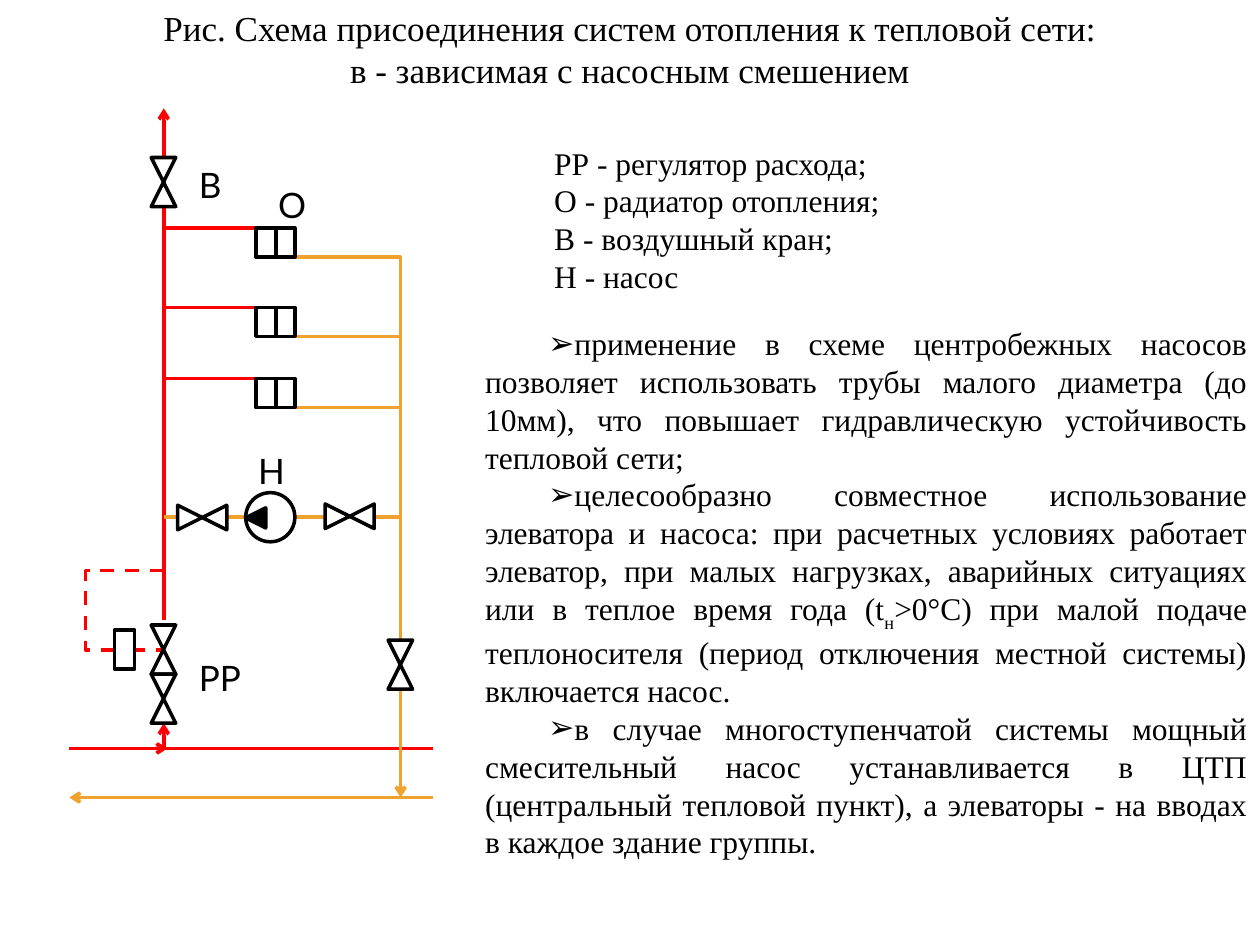
"""Draw a heating scheme with pump mixing beside its legend and notes."""
import pptx
import pptx.util
import pptx.dml.color
import pptx.enum.dml
import pptx.enum.shapes
import pptx.enum.text
import pptx.oxml
import pptx.oxml.ns

STEP = pptx.util.Inches(0.1)
RED, GOLD, BLACK, WHITE = "FF0000", "F0A22E", "000000", "FFFFFF"
SERIF, SANS = "Times New Roman", "Lato"
FORM = pptx.enum.shapes.MSO_SHAPE
LINK = pptx.enum.shapes.MSO_CONNECTOR
ALIGN = pptx.enum.text.PP_ALIGN
HOT, COLD = 13, 31.8
TOP, SUB = 59.4, 63.3

HEAD = ["Рис. Схема присоединения систем отопления к тепловой сети:",
        "в - зависимая с насосным смешением"]
KEYS = ["РР - регулятор расхода;", "О - радиатор отопления;",
        "В - воздушный кран;", "Н - насос"]
NOTES = [
    ["применение в схеме центробежных насосов позволяет использовать трубы "
     "малого диаметра (до 10мм), что повышает гидравлическую устойчивость "
     "тепловой сети;"],
    ["целесообразно совместное использование элеватора и насоса: при "
     "расчетных условиях работает элеватор, при малых нагрузках, аварийных "
     "ситуациях или в теплое время года (t", "н",
     ">0°С) при малой подаче теплоносителя (период отключения местной "
     "системы) включается насос."],
    ["в случае многоступенчатой системы мощный смесительный насос "
     "устанавливается в ЦТП (центральный тепловой пункт), а элеваторы - на "
     "вводах в каждое здание группы."],
]


def grid(*cells):
    return [round(cell * STEP) for cell in cells]


def tint(code):
    return pptx.dml.color.RGBColor.from_string(code)


def node(tag, **attrs):
    item = pptx.oxml.parse_xml(f"<{tag} {pptx.oxml.ns.nsdecls('a')}/>")
    for key, val in attrs.items():
        item.set(key, val)
    return item


def place(shape, box):
    shape.left, shape.top, shape.width, shape.height = grid(*box)


def write(frame, rows, size, face, align=ALIGN.LEFT, mark=None):
    frame.word_wrap = True
    frame.auto_size = pptx.enum.text.MSO_AUTO_SIZE.NONE
    for num, row in enumerate(rows):
        para = frame.paragraphs[0] if num == 0 else frame.add_paragraph()
        for pos, text in enumerate(row):
            run = para.add_run()
            run.text = text
            if pos == 1:
                run.font._element.set("baseline", "-30000")
        para.alignment = align
        para.space_before = pptx.util.Pt(0)
        if mark:
            props = para._p.get_or_add_pPr()
            props.set("marL", "0")
            props.set("indent", str(5 * STEP))
            props.append(node("a:buChar", char=mark))
        para.font.size = pptx.util.Pt(size)
        para.font.name = face
        para.font.color.rgb = tint(BLACK)


def label(shapes, box, rows, size, face):
    shape = shapes.add_textbox(*grid(*box))
    write(shape.text_frame, [[row] for row in rows], size, face)


def pipe(shapes, ends, color, arrow=False, dash=False, bend=None):
    kind = LINK.STRAIGHT if bend is None else LINK.ELBOW
    link = shapes.add_connector(kind, *grid(*ends))
    link.line.color.rgb = tint(color)
    link.line.width = pptx.util.Pt(2)
    if dash:
        link.line.dash_style = pptx.enum.dml.MSO_LINE.DASH
    if arrow:
        link.line._get_or_add_ln().append(node("a:tailEnd", type="arrow"))
    props = link._element.spPr
    if bend is not None:
        list_ = props.find(".//" + pptx.oxml.ns.qn("a:avLst"))
        if list_ is None:
            list_ = node("a:avLst")
            props.find(pptx.oxml.ns.qn("a:prstGeom")).append(list_)
        list_.append(node("a:gd", name="adj1", fmla=f"val {bend}"))
    props.append(node("a:effectLst"))


def part(shapes, form, box, fill=None, turn=0):
    shape = shapes.add_shape(form, *grid(*box))
    shape.shadow.inherit = False
    shape.rotation = turn
    if fill:
        shape.fill.solid()
        shape.fill.fore_color.rgb = tint(fill)
    else:
        shape.fill.background()
    shape.line.color.rgb = tint(BLACK)
    shape.line.width = pptx.util.Pt(2)


def valve(shapes, left, top, flat=False, fill=WHITE):
    group = shapes.add_group_shape().shapes
    right, down = (1.95, 0) if flat else (0, 1.95)
    first, last = (90, 270) if flat else (180, 0)
    form = FORM.ISOSCELES_TRIANGLE
    part(group, form, (left, top, 1.95, 1.95), fill, first)
    part(group, form, (left + right, top + down, 1.95, 1.95), fill, last)


def heater(shapes, top):
    mid, low = 21.9, top + 2.3
    pipe(shapes, (mid, top, HOT, top), RED)
    pipe(shapes, (COLD, low, 20.8, low), GOLD)
    group = shapes.add_group_shape().shapes
    part(group, FORM.RECTANGLE, (20.3, top, 3.1, 2.3))
    pipe(group, (mid, top, mid, low), BLACK)


def pump(shapes):
    pipe(shapes, (HOT, 41.05, COLD, 41.05), GOLD)
    valve(shapes, 25.8, 40, flat=True)
    valve(shapes, 14.1, 40.1, flat=True)
    part(shapes, FORM.OVAL, (19.5, 39.1, 3.9, 3.9), WHITE)
    part(shapes, FORM.ISOSCELES_TRIANGLE, (19.5, 40.3, 1.6, 1.6), BLACK, 270)


def control(shapes):
    pipe(shapes, (HOT, 45.3, 9.3, 51.6), RED, dash=True, bend=167600)
    pipe(shapes, (10.4, 51.6, HOT, 51.6), RED, dash=True)
    part(shapes, FORM.RECTANGLE, (9.1, 50, 1.6, 3.1), WHITE)
    for top in (53.5, 49.6):
        valve(shapes, 12, top, fill=None)


def mains(shapes):
    pipe(shapes, (HOT, 49.2, HOT, 8.6), RED, arrow=True)
    pipe(shapes, (5.5, TOP, 13.3, TOP), RED, arrow=True)
    pipe(shapes, (HOT, TOP, 34.4, TOP), RED)
    pipe(shapes, (HOT, TOP, HOT, 57.4), RED, arrow=True)
    pipe(shapes, (COLD, 20.3, COLD, SUB), GOLD, arrow=True)
    pipe(shapes, (34.4, SUB, 5.5, SUB), GOLD, arrow=True)


def main():
    deck = pptx.Presentation()
    deck.slide_width, deck.slide_height = grid(100, 75)
    slide = deck.slides.add_slide(deck.slide_layouts[1])
    shapes = slide.shapes
    title, body = slide.placeholders
    place(title, (0, 0, 100, 7.7))
    write(title.text_frame, [[row] for row in HEAD], 20, SERIF, ALIGN.CENTER)
    place(body, (37.5, 25.3, 62.5, 43.4))
    body.text_frame.vertical_anchor = pptx.enum.text.MSO_ANCHOR.MIDDLE
    write(body.text_frame, NOTES, 18, SERIF, ALIGN.JUSTIFY, "➢")
    label(shapes, (43, 10.9, 30.5, 13.1), KEYS, 18, SERIF)
    mains(shapes)
    for top in (18.1, 24.4, 30.05):
        heater(shapes, top)
    control(shapes)
    valve(shapes, 30.8, 50.8)
    valve(shapes, 12, 12.5)
    pump(shapes)
    for text, left, top, width in (("О", 21.1, 14.1, 3.9), ("В", 14.8, 12.5, 3.9),
                                   ("РР", 14.8, 51.6, 5.5), ("Н", 19.5, 35.2, 5.5)):
        label(shapes, (left, top, width, 4.4), [text], 20, SANS)
    deck.save("out.pptx")


if __name__ == "__main__":
    main()
